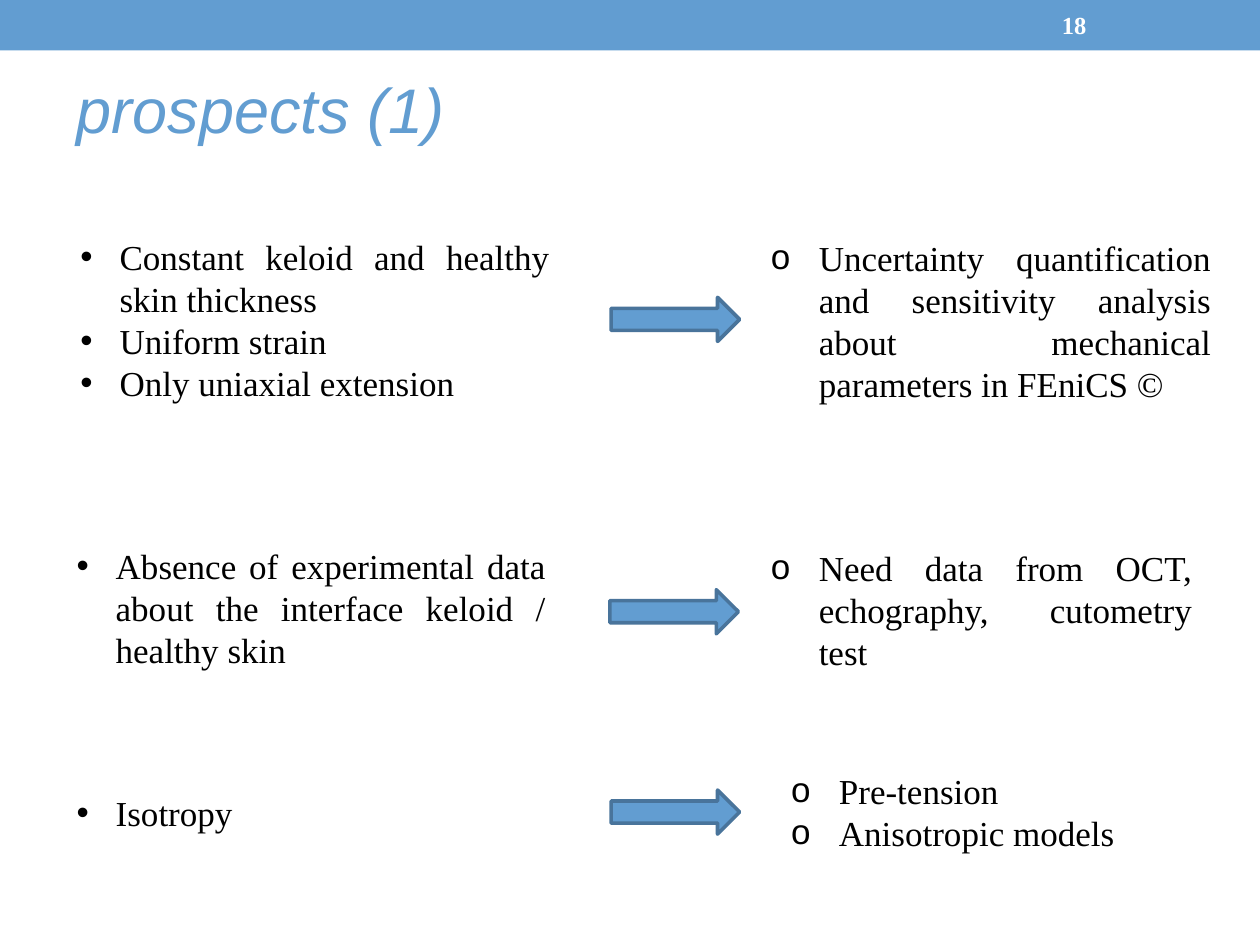
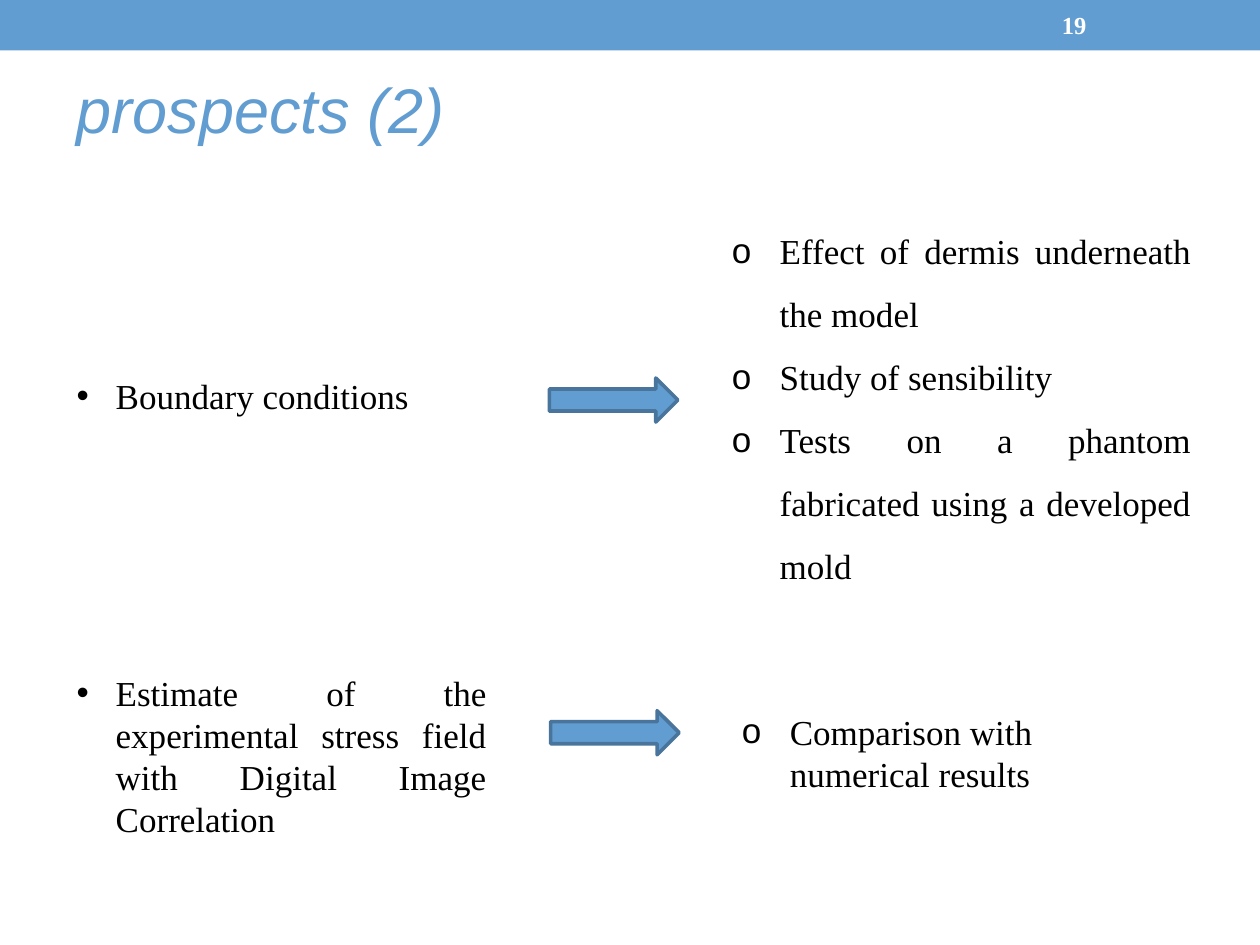
"""Build two slides that pair model limits with prospects."""
from lxml import etree
from pptx import Presentation
from pptx import util as u
from pptx.dml.color import RGBColor
from pptx.enum import shapes, text
from pptx.oxml.ns import qn

COLORS = {"accent": "629DD1", "edge": "49749B", "ink": "000000", "paper": "FFFFFF"}
SERIF, SANS = "Times New Roman", "Arial"
COLUMNS, ROWS = 10, 7.5
CELL = u.Inches(1)
LEFT_EDGE = 0.51
ARROW_SIZE = (1.02, 0.35)
INDENTS = {"•": 0.31, "o": 0.38}
JUSTIFY, LEFT = text.PP_ALIGN.JUSTIFY, text.PP_ALIGN.LEFT


def cells(*counts):
    """Turn counts of grid cells into lengths."""
    return [round(count * CELL) for count in counts]


def color(name):
    """Look up a palette colour."""
    return RGBColor.from_string(COLORS[name])


def add_block(page, kind, place, fill, edge=None):
    """Add a filled preset shape."""
    block = page.shapes.add_shape(kind, *cells(*place))
    block.shadow.inherit = False
    block.fill.solid()
    block.fill.fore_color.rgb = color(fill)
    if edge:
        block.line.color.rgb = color(edge)
        block.line.width = u.Pt(2.08)
    else:
        block.line.fill.background()


def add_text(page, place, lines, size, font, ink, bold=False, italic=False):
    """Add a wrapped text box in one style and return it."""
    box = page.shapes.add_textbox(*cells(*place))
    frame = box.text_frame
    frame.word_wrap = True
    frame.text = "\n".join(lines)
    for para in frame.paragraphs:
        for span in para.runs:
            span.font.size = u.Pt(size)
            span.font.name = font
            span.font.color.rgb = color(ink)
            span.font.bold = bold
            span.font.italic = italic
    return box


def add_list(page, place, mark, lines, align=JUSTIFY, spacing=None):
    """Add a bulleted list with a hanging indent."""
    box = add_text(page, place, lines, 20, SERIF, "ink")
    box.text_frame.auto_size = text.MSO_AUTO_SIZE.SHAPE_TO_FIT_TEXT
    indent, = cells(INDENTS[mark])
    for para in box.text_frame.paragraphs:
        para.alignment = align
        if spacing:
            para.line_spacing = spacing
        props = para._p.get_or_add_pPr()
        props.set("marL", str(indent))
        props.set("indent", str(-indent))
        etree.SubElement(props, qn("a:buFont")).set("typeface", SANS)
        etree.SubElement(props, qn("a:buChar")).set("char", mark)


def add_arrow(page, left, top):
    """Add the arrow from a limit to its prospect."""
    add_block(page, shapes.MSO_SHAPE.RIGHT_ARROW, (left, top, *ARROW_SIZE), "accent", "edge")


def add_page(deck, number, title):
    """Add a page with the band, page number and title."""
    page = deck.slides.add_slide(deck.slide_layouts[6])
    add_block(page, shapes.MSO_SHAPE.RECTANGLE, (0, 0, COLUMNS, 0.4), "accent")
    label = add_text(page, (8.33, 0.02, 1.17, 0.36), [str(number)], 14, SERIF, "paper", bold=True)
    label.text_frame.vertical_anchor = text.MSO_ANCHOR.MIDDLE
    add_text(page, (LEFT_EDGE, 0.51, 9.2, 0.71), [title], 36, SANS, "accent", italic=True)
    return page


def add_model_prospects(deck):
    """Add the page on thickness, interface and isotropy."""
    page = add_page(deck, 18, "prospects (1)")
    add_list(page, (0.54, 1.82, 3.92, 1.45), "•", [
        "Constant keloid and healthy skin thickness",
        "Uniform strain",
        "Only uniaxial extension"])
    add_arrow(page, 4.85, 2.36)
    add_list(page, (6.02, 1.83, 3.69, 1.45), "o", [
        "Uncertainty quantification and sensitivity analysis "
        "about mechanical parameters in FEniCS ©"])

    add_list(page, (LEFT_EDGE, 4.27, 3.92, 1.45), "•", [
        "Absence of experimental data about the interface keloid / healthy skin"])
    add_arrow(page, 4.84, 4.68)
    add_list(page, (6.02, 4.29, 3.54, 1.11), "o", [
        "Need data from OCT, echography, cutometry test"])

    add_list(page, (LEFT_EDGE, 6.23, 3.39, 0.44), "•", ["Isotropy"], LEFT)
    add_arrow(page, 4.85, 6.27)
    add_list(page, (6.18, 6.06, 3.23, 0.77), "o", ["Pre-tension", "Anisotropic models"], LEFT)


def add_test_prospects(deck):
    """Add the page on boundary conditions and stress field."""
    page = add_page(deck, 19, "prospects (2)")
    add_list(page, (LEFT_EDGE, 2.92, 3.45, 0.44), "•", ["Boundary conditions"], LEFT)
    add_arrow(page, 4.36, 3)
    add_list(page, (5.71, 1.61, 3.84, 3.13), "o", [
        "Effect of dermis underneath the model",
        "Study of sensibility",
        "Tests on a phantom fabricated using a developed mold"], spacing=1.5)

    add_list(page, (LEFT_EDGE, 5.28, 3.45, 1.45), "•", [
        "Estimate of the experimental stress field with Digital Image Correlation"])
    add_arrow(page, 4.37, 5.64)
    add_list(page, (5.79, 5.59, 3.68, 0.77), "o", ["Comparison with numerical results"], LEFT)


def main():
    """Build and save the deck."""
    deck = Presentation()
    deck.slide_width, deck.slide_height = cells(COLUMNS, ROWS)
    add_model_prospects(deck)
    add_test_prospects(deck)
    deck.save("out.pptx")


if __name__ == "__main__":
    main()
